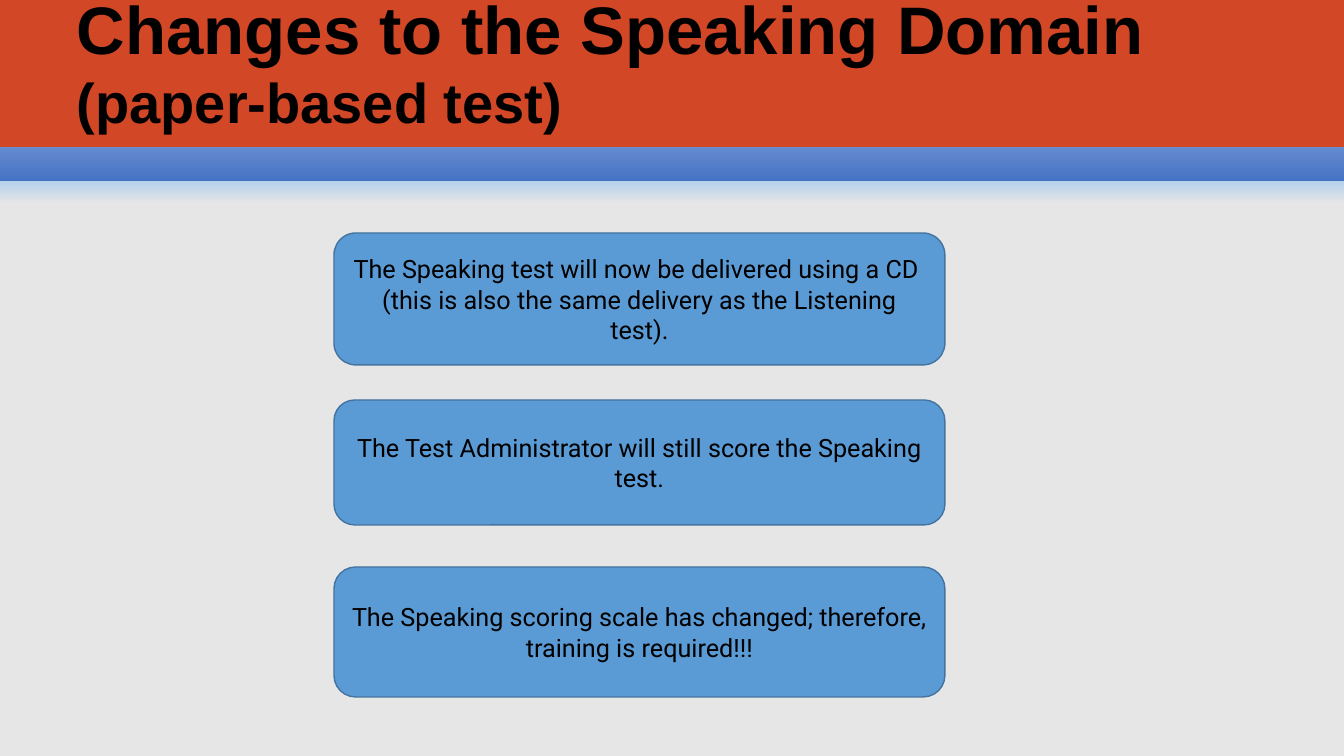
from copy import deepcopy

from pptx import Presentation
from pptx.dml.color import RGBColor
from pptx.enum.shapes import MSO_SHAPE
from pptx.enum.text import MSO_ANCHOR, PP_ALIGN
from pptx.oxml.ns import qn
from pptx.util import Pt

RECT = MSO_SHAPE.RECTANGLE
ROUNDED = MSO_SHAPE.ROUNDED_RECTANGLE
LEFT, CENTER = PP_ALIGN.LEFT, PP_ALIGN.CENTER
BOTTOM, MIDDLE = MSO_ANCHOR.BOTTOM, MSO_ANCHOR.MIDDLE
PX = 914400 / 100.8
COLORS = {
    "band": "D24726",
    "box": "5B9BD5",
    "outline": "43739E",
    "text": "000000",
    "white": "FFFFFF",
    "blue": "4472C4",
    "pale": "B5D2EC",
    "gray": "E7E6E6",
}
STOPS = [(0, "white"), (24, "blue"), (24, "pale"), (27, "gray")]


def px(*values):
    return [round(v * PX) for v in values]


def write(sp, paragraphs, font="Roboto", bold=False, align=CENTER,
          anchor=MIDDLE, spacing=None):
    tf = sp.text_frame
    tf.word_wrap = True
    tf.vertical_anchor = anchor
    for i, runs in enumerate(paragraphs):
        p = tf.add_paragraph() if i else tf.paragraphs[0]
        p.alignment = align
        p.line_spacing = spacing
        for text, size in runs:
            r = p.add_run()
            r.text = text
            r.font.name = font
            r.font.size = Pt(size)
            r.font.bold = bold
            r.font.color.rgb = RGBColor.from_string(COLORS["text"])


prs = Presentation()
prs.slide_width, prs.slide_height = px(1344, 756)
s = prs.slides.add_slide(prs.slide_layouts[6])

fill = s.background.fill
fill.gradient()
fill.gradient_angle = 270
stop_list = s.element.find(".//" + qn("a:gsLst"))
for extra in range(len(STOPS) - len(stop_list)):
    stop_list.append(deepcopy(stop_list[0]))
for gs, (percent, color) in zip(stop_list, STOPS):
    gs.set("pos", str(percent * 1000))
    for child in list(gs):
        gs.remove(child)
    gs.append(gs.makeelement(qn("a:srgbClr"), {"val": COLORS[color]}))

band = s.shapes.add_shape(RECT, *px(0, 0, 1344, 147))
band.shadow.inherit = False
band.fill.solid()
band.fill.fore_color.rgb = RGBColor.from_string(COLORS["band"])
band.line.fill.background()

title = s.shapes.add_textbox(*px(67, 0, 1184, 140))
write(title, [[("Changes to the Speaking Domain ", 48), ("(paper-based test)", 40)]],
      font="Arial", bold=True, align=LEFT, anchor=BOTTOM, spacing=Pt(48))

changes = [
    (132, ["The Speaking test will now be delivered using a CD ",
           "(this is also the same delivery as the Listening test)."]),
    (125, ["The Test Administrator will still score the Speaking test."]),
    (130, ["The Speaking scoring scale has changed; therefore, training is required!!!"]),
]
for i, (height, lines) in enumerate(changes):
    box = s.shapes.add_shape(ROUNDED, *px(334, 233 + 167 * i, 611, height))
    box.shadow.inherit = False
    box.fill.solid()
    box.fill.fore_color.rgb = RGBColor.from_string(COLORS["box"])
    box.line.color.rgb = RGBColor.from_string(COLORS["outline"])
    box.line.width = Pt(1)
    write(box, [[(line, 18)] for line in lines])

prs.save("out.pptx")
